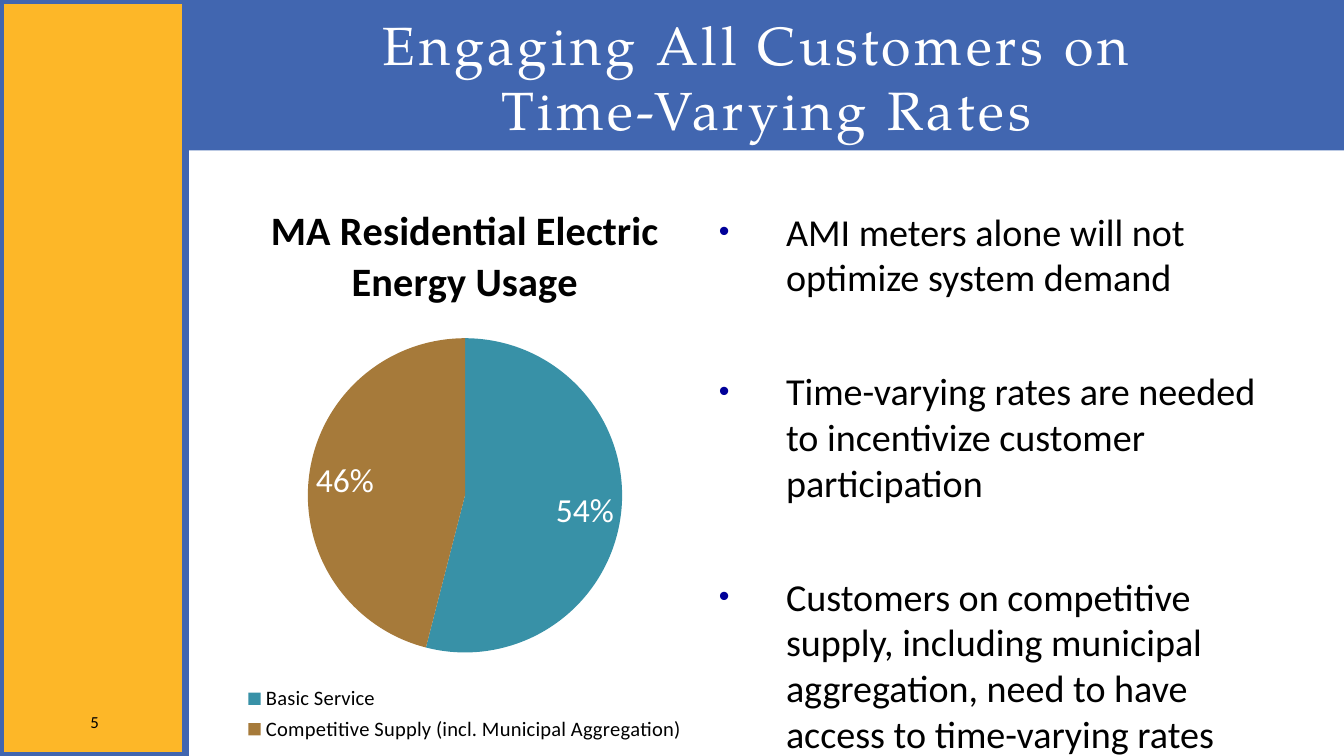
from typing import NamedTuple

from lxml import etree
from pptx import Presentation
from pptx.chart.data import CategoryChartData
from pptx.dml.color import RGBColor
from pptx.enum import chart as ch, shapes, text
from pptx.oxml.ns import qn
from pptx.util import Inches, Pt

WIDE = 10
HIGH = WIDE * 9 / 16
BLUE = RGBColor(0x41, 0x66, 0xB0)
GOLD = RGBColor(0xFD, 0xB7, 0x28)
TEAL = RGBColor(0x38, 0x91, 0xA7)
BROWN = RGBColor(0xA6, 0x7A, 0x3A)
NAVY = RGBColor(0x00, 0x00, 0x99)
BLACK = RGBColor(0, 0, 0)
WHITE = RGBColor(255, 255, 255)
SANS = "Calibri"
SERIF = "TeX Gyre Pagella"


class Box(NamedTuple):
    left: float
    top: float
    width: float
    height: float

    def emu(self):
        return [Inches(n) for n in self]


class Slice(NamedTuple):
    name: str
    share: float
    color: RGBColor


POINTS = [
    "AMI meters alone will not optimize system demand",
    "Time-varying rates are needed to incentivize customer participation",
    "Customers on competitive supply, including municipal aggregation, "
    "need to have access to time-varying rates",
]
SLICES = [
    Slice("Basic Service", 0.54, TEAL),
    Slice("Competitive Supply (incl. Municipal Aggregation)", 0.46, BROWN),
]


def style(font, size: float, color: RGBColor, name: str = SANS, bold: bool = False) -> None:
    font.size, font.name, font.bold = Pt(size), name, bold
    font.color.rgb = color


def add_band(slide, box: Box, fill: RGBColor):
    band = slide.shapes.add_shape(shapes.MSO_SHAPE.RECTANGLE, *box.emu())
    band.shadow.inherit = False
    band.fill.solid()
    band.fill.fore_color.rgb = fill
    band.line.fill.background()
    return band


def add_text(slide, box: Box, words: str, middle: bool = True):
    """Add a wrapping text box and return its frame."""
    frame = slide.shapes.add_textbox(*box.emu()).text_frame
    frame.word_wrap = True
    frame.text = words
    if middle:
        frame.vertical_anchor = text.MSO_ANCHOR.MIDDLE
        frame.paragraphs[0].alignment = text.PP_ALIGN.CENTER
    return frame


def add_bullet(para) -> None:
    props = para._p.get_or_add_pPr()
    props.set("marL", str(Inches(0.5)))
    props.set("indent", str(-Inches(0.5)))
    color = etree.SubElement(props, qn("a:buClr"))
    etree.SubElement(color, qn("a:srgbClr"), val=str(NAVY))
    etree.SubElement(props, qn("a:buSzPct"), val="80000")
    etree.SubElement(props, qn("a:buFont"), typeface="Arial")
    etree.SubElement(props, qn("a:buChar"), char="•")


def add_points(slide, box: Box) -> None:
    frame = add_text(slide, box, "\n".join(POINTS), middle=False)
    for i, para in enumerate(frame.paragraphs):
        add_bullet(para)
        para.space_before = Pt(36.5 if i else 0)
        style(para.font, 20.4, BLACK)


def add_pie(slide, box: Box) -> None:
    data = CategoryChartData(number_format="0%")
    data.categories = [s.name for s in SLICES]
    data.add_series("Series 1", [s.share for s in SLICES])
    pie = slide.shapes.add_chart(ch.XL_CHART_TYPE.PIE, *box.emu(), data).chart
    style(pie.font, 18, BLACK)

    pie.has_title = True
    head = pie.chart_title.text_frame
    head.text = "MA Residential Electric Energy Usage"
    style(head.paragraphs[0].font, 21.6, BLACK, bold=True)

    pie.has_legend = True
    pie.legend.position = ch.XL_LEGEND_POSITION.BOTTOM
    pie.legend.include_in_layout = False
    style(pie.legend.font, 11, BLACK)

    plot = pie.plots[0]
    plot.vary_by_categories = True
    for i, part in enumerate(SLICES):
        fill = plot.series[0].points[i].format.fill
        fill.solid()
        fill.fore_color.rgb = part.color
    labels = plot.series[0].data_labels
    labels.show_value = True
    labels.number_format = "0%"
    labels.number_format_is_linked = False
    labels.position = ch.XL_LABEL_POSITION.BEST_FIT
    style(labels.font, 18, WHITE)


def main() -> None:
    deck = Presentation()
    deck.slide_width, deck.slide_height = Inches(WIDE), Inches(HIGH)
    slide = deck.slides.add_slide(deck.slide_layouts[6])

    add_band(slide, Box(0, 0, WIDE, 1.12), BLUE)
    side = add_band(slide, Box(0, 0, 1.38, HIGH), GOLD)
    side.line.color.rgb = BLUE
    side.line.width = Pt(4)

    add_points(slide, Box(5.25, 1.5, 4.42, 4.1))
    number = add_text(slide, Box(0.08, 5.22, 1.25, 0.3), "5")
    style(number.paragraphs[0].font, 9, BLACK)

    title = add_text(slide, Box(1.58, 0.05, 8.25, 1.04),
                     "Engaging All Customers on \vTime-Varying Rates")
    para = title.paragraphs[0]
    style(para.font, 28.8, WHITE, SERIF)
    for run in para.runs:
        run._r.get_or_add_rPr().set("spc", "200")

    add_pie(slide, Box(1.5, 1.31, 3.92, 4.25))
    deck.save("out.pptx")


if __name__ == "__main__":
    main()
